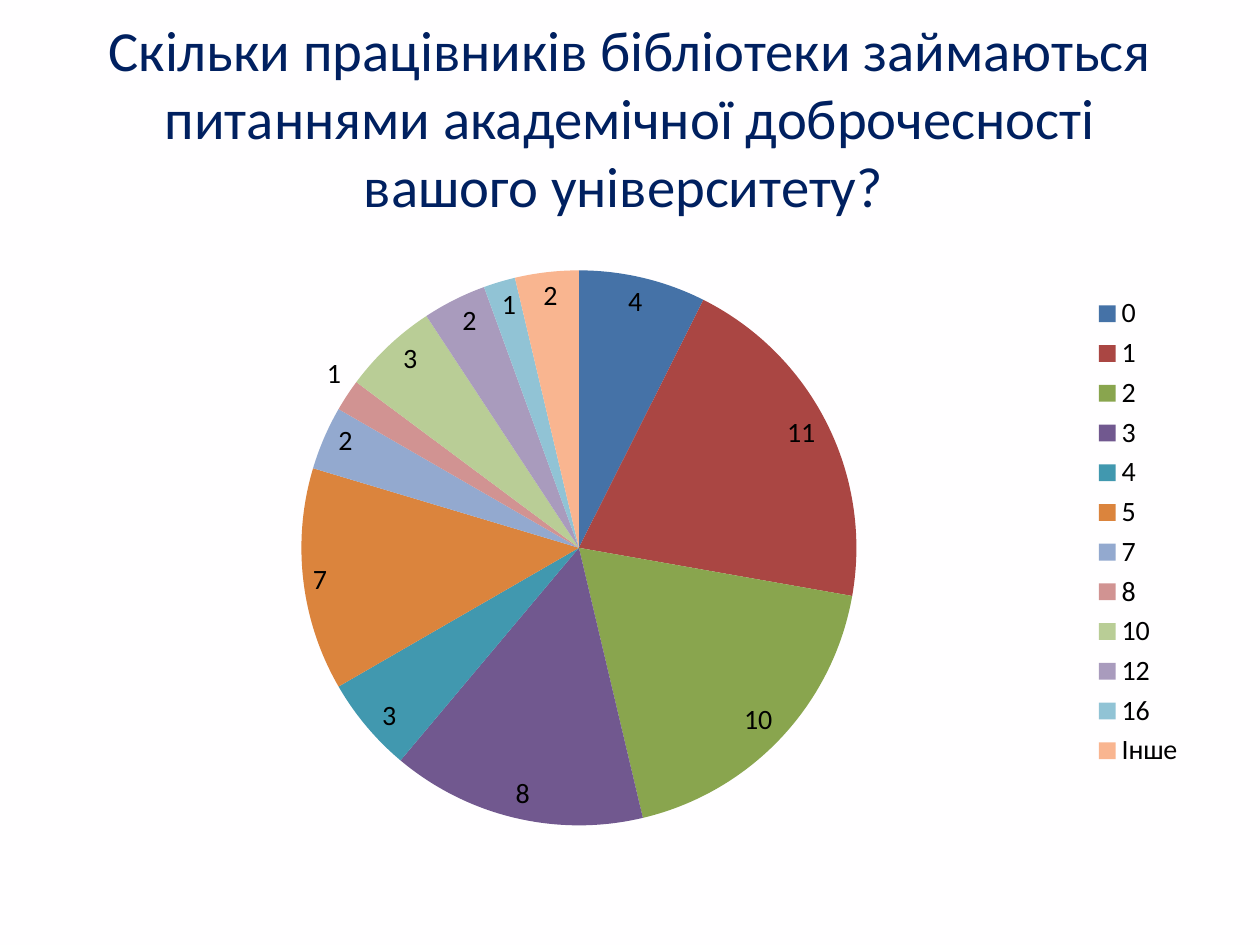
from lxml import etree
from pptx import Presentation
from pptx.chart.data import CategoryChartData
from pptx.dml.color import RGBColor
from pptx.enum import chart as charts, text
from pptx.oxml import parse_xml
from pptx.oxml.ns import nsdecls
from pptx.util import Inches, Pt

TITLE = "Скільки працівників бібліотеки займаються питаннями академічної доброчесності вашого університету? "
# staff count, number of answers, slice colour
ANSWERS = [
    ("0", 4, "4572A7"), ("1", 11, "AA4643"), ("2", 10, "89A54E"),
    ("3", 8, "71588F"), ("4", 3, "4198AF"), ("5", 7, "DB843D"),
    ("7", 2, "93A9CF"), ("8", 1, "D19392"), ("10", 3, "B9CD96"),
    ("12", 2, "A99BBD"), ("16", 1, "91C3D5"), ("Інше", 2, "F9B590"),
]
THEME = {
    "font": "Calibri", "background": "FFFEFF", "title": "002060", "text": "000000",
    "title_size": 32.4, "chart_size": 16,
}
TITLE_BOX = (0.5, 0.3, 9, 1.25)
CHART_BOX = (0.5, 1.75, 9, 4.95)
PIE_AREA = {"x": 0.21, "y": 0.08, "w": 0.49, "h": 0.89}  # shares of the chart


def style_font(font, size, colour):
    font.name = THEME["font"]
    font.size = Pt(size)
    font.color.rgb = RGBColor.from_string(colour)


def add_title(page):
    title = page.shapes.title
    title.left, title.top, title.width, title.height = map(Inches, TITLE_BOX)
    frame = title.text_frame
    frame.text = TITLE
    frame.word_wrap = True
    frame.auto_size = text.MSO_AUTO_SIZE.NONE
    frame.vertical_anchor = text.MSO_ANCHOR.MIDDLE
    para = frame.paragraphs[0]
    para.alignment = text.PP_ALIGN.CENTER
    style_font(para.runs[0].font, THEME["title_size"], THEME["title"])


def place_plot(chart):
    """Fix the pie's area inside the chart frame."""
    plot_area = chart._chartSpace.chart.plotArea
    for old in plot_area.findall("{*}layout"):
        plot_area.remove(old)
    layout = parse_xml(f"<c:layout {nsdecls('c')}><c:manualLayout/></c:layout>")
    settings = {"layoutTarget": "inner", "xMode": "edge", "yMode": "edge", **PIE_AREA}
    for name, value in settings.items():
        tag = etree.QName(layout).namespace
        etree.SubElement(layout[0], f"{{{tag}}}{name}").set("val", str(value))
    plot_area.insert(0, layout)


def add_pie(page):
    names, counts, colours = zip(*ANSWERS)
    data = CategoryChartData()
    data.categories = names
    data.add_series("Series 1", counts)
    chart = page.shapes.add_chart(
        charts.XL_CHART_TYPE.PIE, *map(Inches, CHART_BOX), data).chart
    style_font(chart.font, THEME["chart_size"], THEME["text"])
    chart.has_title = False
    chart.has_legend = True
    chart.legend.position = charts.XL_LEGEND_POSITION.RIGHT
    chart.legend.include_in_layout = False
    place_plot(chart)

    plot = chart.plots[0]
    plot.vary_by_categories = True
    plot.has_data_labels = True
    labels = plot.data_labels
    labels.show_value = True
    labels.show_percentage = False
    labels.position = charts.XL_LABEL_POSITION.BEST_FIT
    style_font(labels.font, THEME["chart_size"], THEME["text"])
    for index, colour in enumerate(colours):
        fill = plot.series[0].points[index].format.fill
        fill.solid()
        fill.fore_color.rgb = RGBColor.from_string(colour)


def main():
    deck = Presentation()
    deck.slide_width, deck.slide_height = Inches(10), Inches(7.5)
    page = deck.slides.add_slide(deck.slide_layouts[5])
    page.background.fill.solid()
    page.background.fill.fore_color.rgb = RGBColor.from_string(THEME["background"])
    add_title(page)
    add_pie(page)
    deck.save("out.pptx")


if __name__ == "__main__":
    main()
